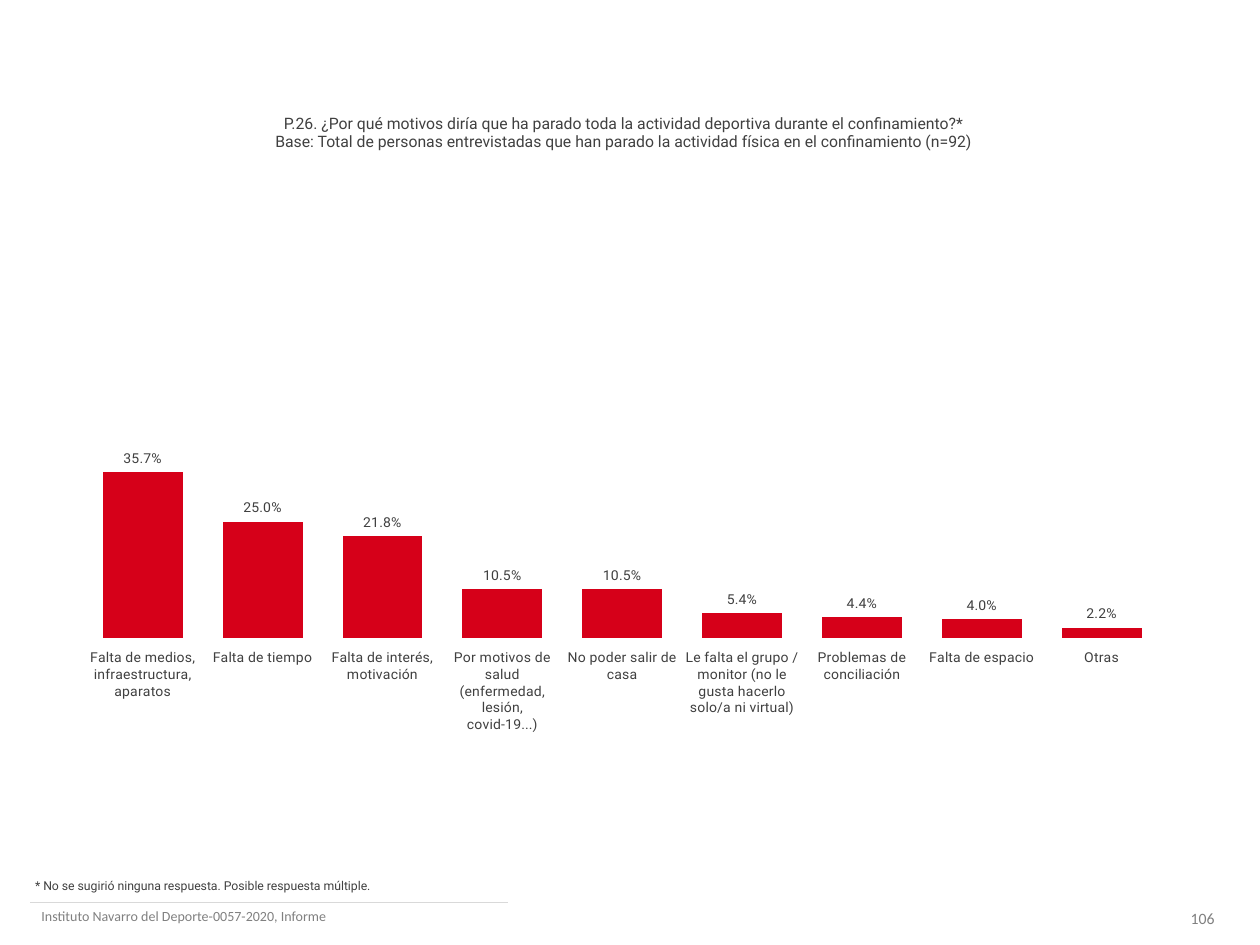
"""Build the survey slide on why people stopped all sport during lockdown."""
from dataclasses import dataclass

from lxml.etree import SubElement
from pptx import Presentation
from pptx.chart.data import CategoryChartData
from pptx.dml.color import RGBColor
from pptx.enum.chart import XL_CHART_TYPE as ChartType
from pptx.enum.chart import XL_LABEL_POSITION as LabelPosition
from pptx.enum.chart import XL_TICK_MARK as TickMark
from pptx.enum.shapes import MSO_CONNECTOR as Connector
from pptx.enum.text import MSO_ANCHOR as Anchor
from pptx.enum.text import PP_ALIGN as Align
from pptx.oxml.ns import qn
from pptx.util import Inches, Pt

DARK = RGBColor(0x40, 0x40, 0x40)
GREY = RGBColor(0x80, 0x80, 0x80)
RULE_GREY = RGBColor(0xD9, 0xD9, 0xD9)
RED = RGBColor(0xD6, 0x00, 0x19)

CONTENT_LEFT, CONTENT_WIDTH = 0.44, 9.07


@dataclass(frozen=True)
class Label:
    lines: tuple[str, ...]
    left: float
    top: float
    width: float
    height: float
    size: float
    font: str = "Roboto"
    color: RGBColor = DARK
    align: Align = Align.LEFT
    anchor: Anchor = Anchor.TOP
    left_inset: float = 0.1
    wrap: bool = True


LABELS = (
    Label(("Instituto Navarro del Deporte-0057-2020, Informe",),
          0.23, 7.15, 3.19, 0.24, 8, "Calibri", GREY),
    Label(("106",), 9.21, 7.16, 0.67, 0.25, 9, "Calibri", GREY,
          Align.CENTER, Anchor.MIDDLE),
    Label(("P.26. ¿Por qué motivos diría que ha parado toda la actividad "
           "deportiva durante el confinamiento?*",
           "Base: Total de personas entrevistadas que han parado la actividad "
           "física en el confinamiento (n=92)"),
          CONTENT_LEFT, 0.85, CONTENT_WIDTH, 0.4, 9,
          align=Align.CENTER, left_inset=0.04),
    Label(("* No se sugirió ninguna respuesta. Posible respuesta múltiple.",),
          0.18, 6.92, 2.9, 0.22, 7, wrap=False),
)

REASONS = {
    "Falta de medios, infraestructura, aparatos": 0.357,
    "Falta de tiempo": 0.25,
    "Falta de interés, motivación": 0.218,
    "Por motivos de salud (enfermedad, lesión, covid-19...)": 0.105,
    "No poder salir de casa": 0.105,
    "Le falta el grupo / monitor (no le gusta hacerlo solo/a ni virtual)": 0.054,
    "Problemas de conciliación": 0.044,
    "Falta de espacio": 0.04,
    "Otras": 0.022,
}


def add_label(slide, label: Label) -> None:
    shape = slide.shapes.add_textbox(Inches(label.left), Inches(label.top),
                                     Inches(label.width), Inches(label.height))
    frame = shape.text_frame
    frame.word_wrap = label.wrap
    frame.vertical_anchor = label.anchor
    frame.margin_left = Inches(label.left_inset)
    for index, line in enumerate(label.lines):
        paragraph = frame.add_paragraph() if index else frame.paragraphs[0]
        paragraph.alignment = label.align
        run = paragraph.add_run()
        run.text = line
        run.font.size = Pt(label.size)
        run.font.name = label.font
        run.font.color.rgb = label.color


def set_plot_layout(chart, **position: float) -> None:
    plot_area = chart.plots[0]._element.getparent()
    layout = plot_area.find(qn("c:layout"))
    if layout is None:
        layout = SubElement(plot_area, qn("c:layout"))
        plot_area.insert(0, layout)
    manual = SubElement(layout, qn("c:manualLayout"))
    settings = {"layoutTarget": "inner", "xMode": "edge", "yMode": "edge", **position}
    for name, value in settings.items():
        SubElement(manual, qn(f"c:{name}")).set("val", str(value))


def add_reasons_chart(slide) -> None:
    data = CategoryChartData(number_format="0.0%")
    data.categories = list(REASONS)
    data.add_series("Series 1", list(REASONS.values()))
    chart = slide.shapes.add_chart(
        ChartType.COLUMN_CLUSTERED, Inches(CONTENT_LEFT), Inches(1.37),
        Inches(CONTENT_WIDTH), Inches(4.45), data).chart
    chart.has_legend = False
    chart.has_title = False
    chart.font.size = Pt(8)
    chart.font.name = "Roboto"
    chart.font.color.rgb = DARK

    chart.category_axis.format.line.fill.background()
    chart.category_axis.major_tick_mark = TickMark.OUTSIDE
    value_axis = chart.value_axis
    value_axis.visible = False
    value_axis.has_major_gridlines = False
    value_axis.minimum_scale = 0
    value_axis.maximum_scale = 1
    value_axis.major_unit = 0.25
    value_axis.tick_labels.number_format = "###0.0%"
    value_axis.tick_labels.number_format_is_linked = False

    plot = chart.plots[0]
    plot.gap_width = 50
    plot.vary_by_categories = False
    series = plot.series[0]
    series.format.fill.solid()
    series.format.fill.fore_color.rgb = RED
    labels = series.data_labels
    labels.show_value = True
    labels.position = LabelPosition.OUTSIDE_END
    labels.number_format = "0.0%"
    labels.number_format_is_linked = False
    set_plot_layout(chart, x=0.024, y=0, w=0.944, h=0.85)


def add_footer_rule(slide) -> None:
    rule = slide.shapes.add_connector(Connector.STRAIGHT, Inches(0.24), Inches(7.16),
                                      Inches(4.03), Inches(7.16))
    rule.line.color.rgb = RULE_GREY
    rule.line.width = Pt(0.5)
    SubElement(rule._element.spPr, qn("a:effectLst"))


def main() -> None:
    presentation = Presentation()
    presentation.slide_width = Inches(10)
    presentation.slide_height = Inches(7.5)
    slide = presentation.slides.add_slide(presentation.slide_layouts[6])
    for label in LABELS:
        add_label(slide, label)
    add_reasons_chart(slide)
    add_footer_rule(slide)
    presentation.save("out.pptx")


if __name__ == "__main__":
    main()
